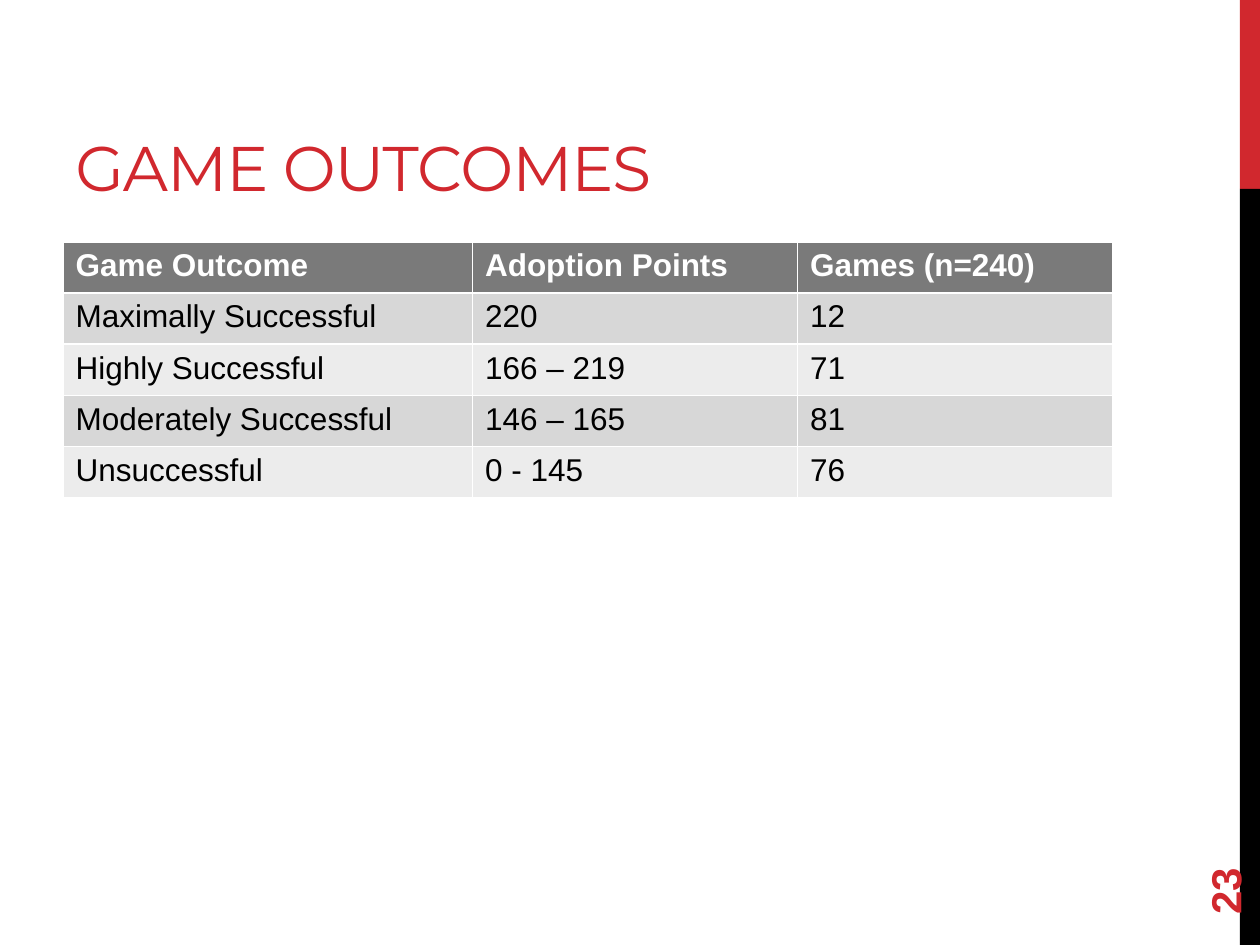
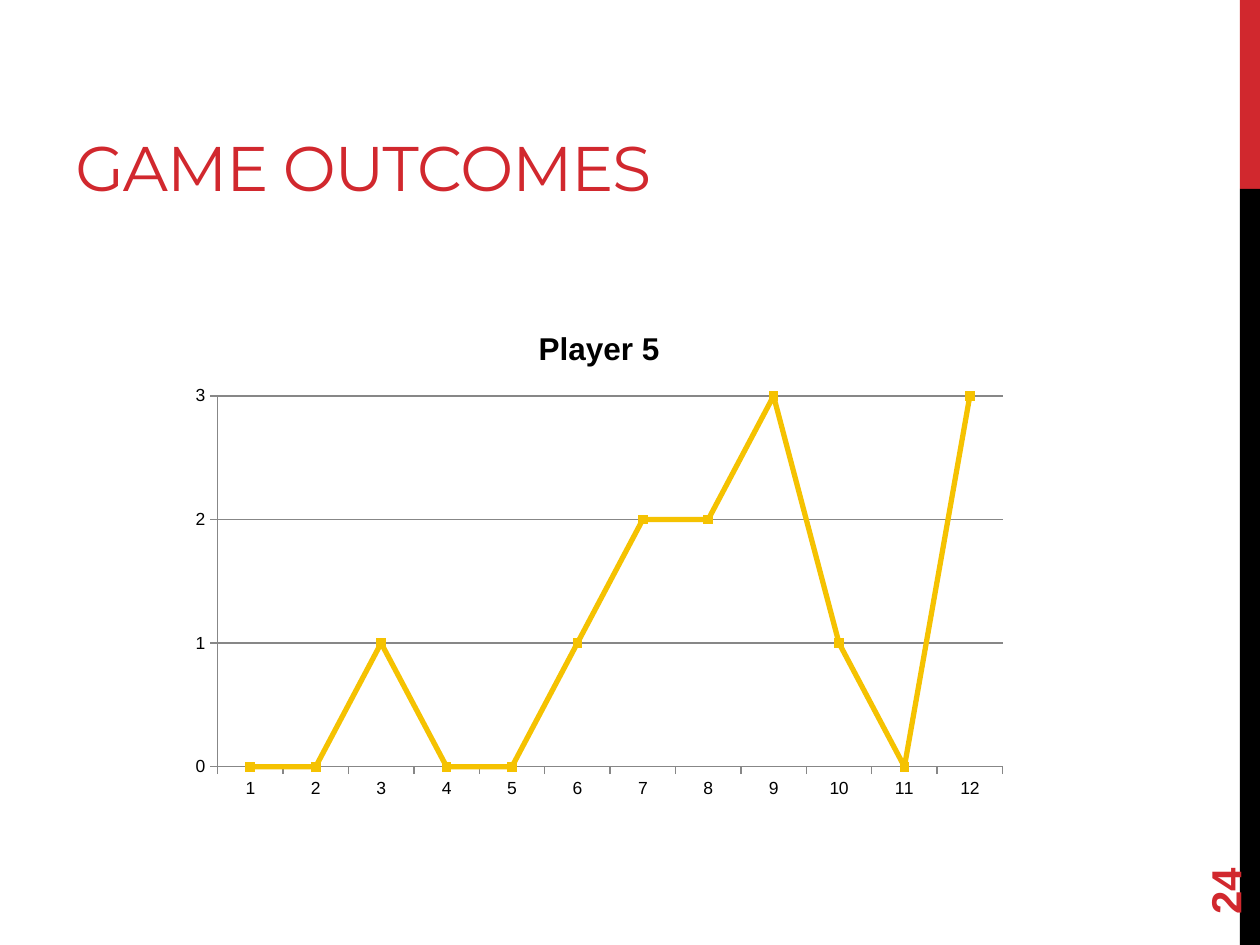
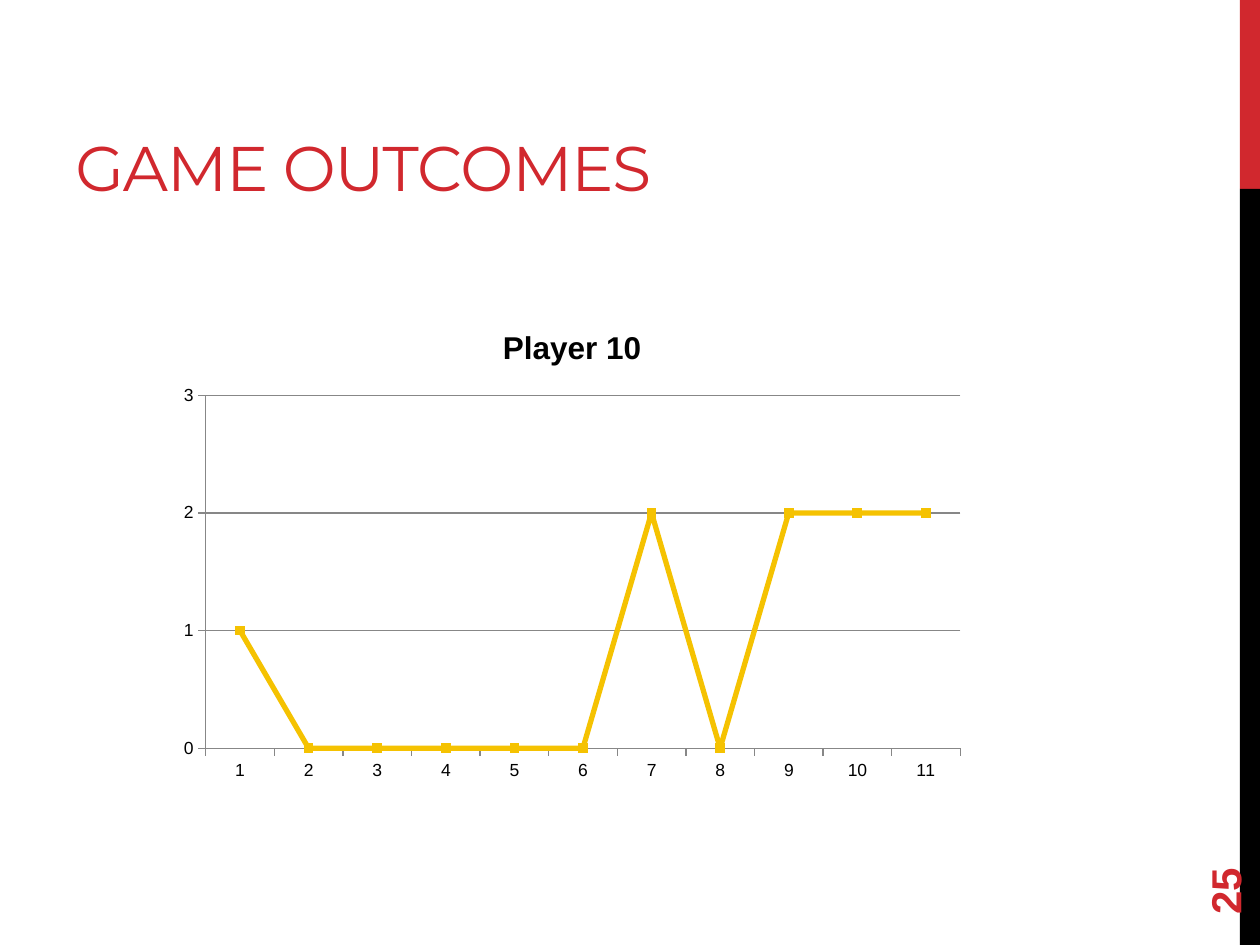
from dataclasses import dataclass

from pptx import Presentation
from pptx.chart import data as cd
from pptx.dml.color import RGBColor
from pptx.enum import chart as ce, shapes, text
from pptx.util import Inches, Pt

RED = RGBColor(0xD1, 0x28, 0x2E)
BLACK = RGBColor(0, 0, 0)
WHITE = RGBColor(0xFF, 0xFF, 0xFF)
GOLD = RGBColor(0xF5, 0xC2, 0x01)
AXIS = RGBColor(0x87, 0x87, 0x87)
HEAD = RGBColor(0x7A, 0x7A, 0x7A)
TINTS = RGBColor(0xEC, 0xEC, 0xEC), RGBColor(0xD7, 0xD7, 0xD7)
FONT = "Arial"


@dataclass
class Band:
    """A strip of the right-hand edge."""
    top: float
    high: float
    color: RGBColor


@dataclass
class Plot:
    """One player's line chart."""
    name: str
    box: tuple[float, float, float, float]
    vals: list[int]


BANDS = [Band(0, 1.5, RED), Band(1.5, 6, BLACK)]
WIDTHS = [3.25, 2.58, 2.5]
ROWS = [
    ("Game Outcome", "Adoption Points", "Games (n=240)"),
    ("Maximally Successful", "220", "12"),
    ("Highly Successful", "166 – 219", "71"),
    ("Moderately Successful", "146 – 165", "81"),
    ("Unsuccessful", "0 - 145", "76"),
]
PLOTS = [
    Plot("Player 5", (1.42, 2.42, 6.67, 4), [0, 0, 1, 0, 0, 1, 2, 2, 3, 1, 0, 3]),
    Plot("Player 10", (1.33, 2.42, 6.42, 3.85), [1, 0, 0, 0, 0, 0, 2, 0, 2, 2, 2]),
]


def style(font, size: float, color: RGBColor, bold: bool = False, name: str = FONT) -> None:
    """Set a font's face, size, colour and weight."""
    font.name, font.size, font.bold = name, Pt(size), bold
    font.color.rgb = color


def add_text(slide, words: str, box: tuple, anchor):
    """Add a wrapping text box and return it with its paragraph."""
    shape = slide.shapes.add_textbox(*map(Inches, box))
    frame = shape.text_frame
    frame.word_wrap = True
    frame.vertical_anchor = anchor
    para = frame.paragraphs[0]
    para.text = words
    return shape, para


def add_page(prs, num: int):
    """Add a slide with its bands, title and page number."""
    slide = prs.slides.add_slide(prs.slide_layouts[6])
    for band in BANDS:
        box = map(Inches, (9.84, band.top, 0.16, band.high))
        rect = slide.shapes.add_shape(shapes.MSO_SHAPE.RECTANGLE, *box)
        rect.shadow.inherit = False
        rect.fill.solid()
        rect.fill.fore_color.rgb = band.color
        rect.line.fill.background()
    _, para = add_text(slide, "GAME OUTCOMES", (0.5, 0.17, 6.83, 1.5), text.MSO_ANCHOR.BOTTOM)
    style(para.font, 36, RED, name="Montserrat")
    para.runs[0]._r.get_or_add_rPr().set("spc", "-60")
    label, para = add_text(slide, str(num), (9, 6.44, 1.44, 0.4), text.MSO_ANCHOR.MIDDLE)
    label.rotation = 270
    style(para.font, 24, RED, True)
    return slide


def add_grid(slide) -> None:
    """Add the table of outcomes."""
    box = map(Inches, (0.5, 1.92, sum(WIDTHS), 2.03))
    table = slide.shapes.add_table(len(ROWS), len(WIDTHS), *box).table
    for col, width in zip(table.columns, WIDTHS):
        col.width = Inches(width)
    for i, row in enumerate(ROWS):
        for j, words in enumerate(row):
            cell = table.cell(i, j)
            cell.text = words
            cell.fill.solid()
            cell.fill.fore_color.rgb = TINTS[i % 2] if i else HEAD
            color = BLACK if i else WHITE
            style(cell.text_frame.paragraphs[0].font, 18, color, i == 0)


def add_plot(slide, plot: Plot) -> None:
    """Add a player's line chart."""
    data = cd.CategoryChartData()
    data.categories = [str(n + 1) for n in range(len(plot.vals))]
    data.add_series(plot.name, plot.vals)
    kind = ce.XL_CHART_TYPE.LINE_MARKERS
    chart = slide.shapes.add_chart(kind, *map(Inches, plot.box), data).chart
    style(chart.font, 10, BLACK)
    chart.has_legend = False
    chart.has_title = True
    para = chart.chart_title.text_frame.paragraphs[0]
    para.text = plot.name
    style(para.font, 18, BLACK, True)
    chart.plots[0].vary_by_categories = False

    vert = chart.value_axis
    vert.minimum_scale, vert.maximum_scale, vert.major_unit = 0, 3, 1
    vert.has_major_gridlines = True
    for axis in (vert, chart.category_axis):
        axis.major_tick_mark = ce.XL_TICK_MARK.OUTSIDE
    for part in (vert, chart.category_axis, vert.major_gridlines):
        part.format.line.color.rgb = AXIS
        part.format.line.width = Pt(0.75)

    line = chart.plots[0].series[0]
    line.smooth = False
    line.format.line.color.rgb = GOLD
    line.format.line.width = Pt(3)
    mark = line.marker
    mark.style, mark.size = ce.XL_MARKER_STYLE.SQUARE, 5
    mark.format.fill.solid()
    mark.format.fill.fore_color.rgb = GOLD
    mark.format.line.color.rgb = GOLD


def main() -> None:
    """Build and save the slides."""
    prs = Presentation()
    prs.slide_width, prs.slide_height = Inches(10), Inches(7.5)
    add_grid(add_page(prs, 23))
    for num, plot in enumerate(PLOTS, 24):
        add_plot(add_page(prs, num), plot)
    prs.save("out.pptx")


if __name__ == "__main__":
    main()
